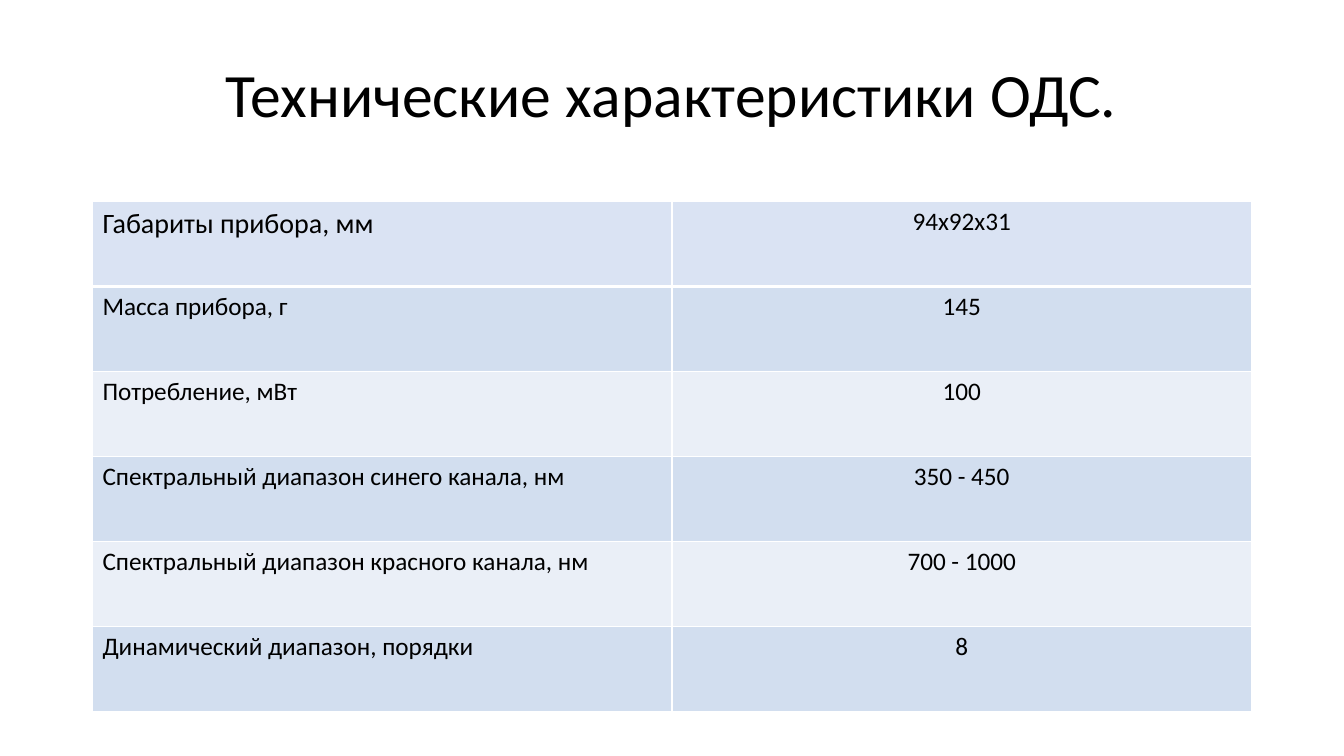
import lxml.etree
import pptx
import pptx.dml.color
import pptx.enum.text
import pptx.oxml.ns
import pptx.util

Cm = pptx.util.Cm
Pt = pptx.util.Pt
ALIGN = pptx.enum.text.PP_ALIGN

CHARACTERISTICS = [
    ("Габариты прибора, мм", "94х92х31"),
    ("Масса прибора, г", "145"),
    ("Потребление, мВт", "100"),
    ("Спектральный диапазон синего канала, нм", "350 - 450"),
    ("Спектральный диапазон красного канала, нм", "700 - 1000"),
    ("Динамический диапазон, порядки", "8"),
]
HEADER_FILL = "DAE3F3"
BAND_FILLS = ["EAEFF7", "D2DEEF"]
LEFT = Cm(2.33)
WIDTH = Cm(29.21)
ROW_HEIGHT = Cm(2.14)


def color(hex_value):
    return pptx.dml.color.RGBColor.from_string(hex_value)


def write(frame, text, size=18, align=ALIGN.LEFT, spacing=None):
    paragraph = frame.paragraphs[0]
    paragraph.alignment = align
    paragraph.line_spacing = spacing
    run = paragraph.add_run()
    run.text = text
    run.font.size = Pt(size)
    run.font.name = "Calibri"
    run.font.color.rgb = color("000000")


def add_title(slide, text):
    title = slide.shapes.add_textbox(LEFT, Cm(1.01), WIDTH, Cm(2.92))
    frame = title.text_frame
    frame.word_wrap = True
    frame.vertical_anchor = pptx.enum.text.MSO_ANCHOR.MIDDLE
    write(frame, text, size=44, align=ALIGN.CENTER, spacing=0.9)


def set_borders(cell, widths):
    qn = pptx.oxml.ns.qn
    properties = cell._tc.get_or_add_tcPr()
    for side, width in widths.items():
        line = lxml.etree.SubElement(properties, qn(f"a:ln{side}"), w=str(Pt(width)))
        fill = lxml.etree.SubElement(line, qn("a:solidFill"))
        lxml.etree.SubElement(fill, qn("a:srgbClr"), val="FFFFFF")


def style_cell(cell, fill, top, bottom):
    set_borders(cell, {"L": 1, "R": 1, "T": top, "B": bottom})
    cell.fill.solid()
    cell.fill.fore_color.rgb = color(fill)


def add_characteristics(slide, entries):
    height = ROW_HEIGHT * len(entries)
    table = slide.shapes.add_table(len(entries), 2, LEFT, Cm(5.08), WIDTH, height).table
    for index, (parameter, value) in enumerate(entries):
        table.rows[index].height = ROW_HEIGHT
        parameter_cell, value_cell = table.rows[index].cells
        fill = BAND_FILLS[index % 2] if index else HEADER_FILL
        for cell in (parameter_cell, value_cell):
            style_cell(cell, fill, top=3 if index == 1 else 1, bottom=1 if index else 3)
        write(parameter_cell.text_frame, parameter, size=18 if index else 20)
        write(value_cell.text_frame, value, align=ALIGN.CENTER)


def main():
    presentation = pptx.Presentation()
    presentation.slide_width = Cm(33.87)
    presentation.slide_height = Cm(19.05)
    slide = presentation.slides.add_slide(presentation.slide_layouts[6])
    add_title(slide, "Технические характеристики ОДС.")
    add_characteristics(slide, CHARACTERISTICS)
    presentation.save("out.pptx")


if __name__ == "__main__":
    main()
